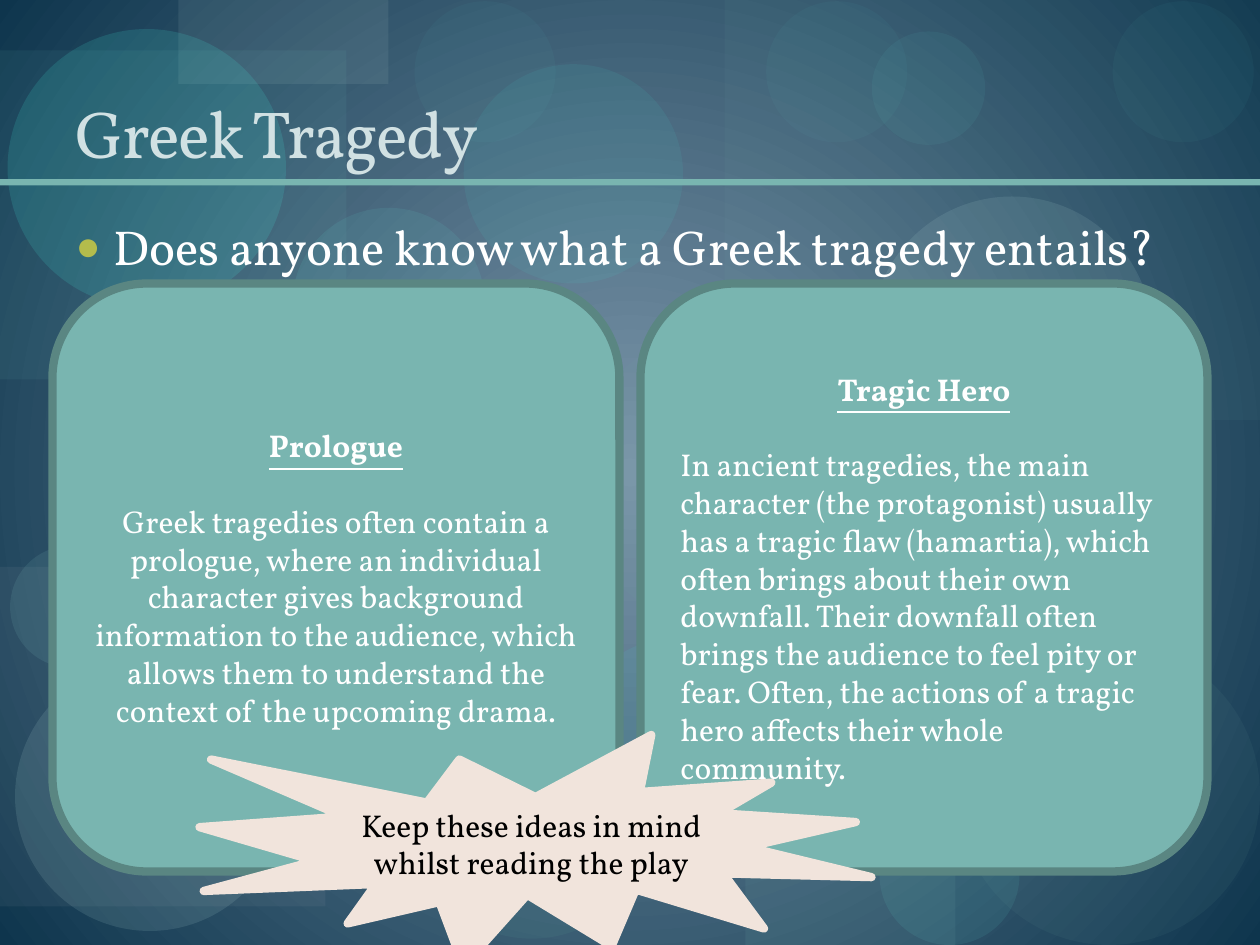
from lxml.etree import SubElement
from pptx import Presentation
from pptx.dml.color import RGBColor
from pptx.enum.shapes import MSO_SHAPE
from pptx.enum.text import MSO_ANCHOR, MSO_AUTO_SIZE, PP_ALIGN
from pptx.oxml.ns import qn
from pptx.util import Pt

FONT = "Vollkorn"
WHITE = RGBColor(0xFF, 0xFF, 0xFF)
BLACK = RGBColor(0x00, 0x00, 0x00)
TITLE_GRAY = RGBColor(0xD1, 0xE1, 0xE3)
BULLET_GREEN = RGBColor(0xB4, 0xBC, 0x4C)
TEAL = RGBColor(0x79, 0xB5, 0xB0)
CARD_BORDER = RGBColor(0x5A, 0x86, 0x82)
CREAM = RGBColor(0xF1, 0xE4, 0xDC)
CENTER_BLUE = RGBColor(0x7B, 0x96, 0xAA)
EDGE_BLUE = RGBColor(0x0E, 0x35, 0x4D)
DEEP_TEAL = RGBColor(0x54, 0x97, 0x91)
SAGE = RGBColor(0x70, 0xA3, 0x9E)
SILVER = RGBColor(0xB2, 0xB7, 0xBA)
AQUA = RGBColor(0x65, 0xE8, 0xDC)
BRIGHT_AQUA = RGBColor(0x44, 0xEA, 0xDC)
SOFT_AQUA = RGBColor(0x97, 0xDC, 0xD6)
PALE_AQUA = RGBColor(0xC1, 0xE8, 0xE4)
MIST = RGBColor(0xBE, 0xD7, 0xD4)
TURQUOISE = RGBColor(0x77, 0xD6, 0xCE)

OVAL = MSO_SHAPE.OVAL
RECTANGLE = MSO_SHAPE.RECTANGLE

# kind, (left, top, width, height) in points, color, opacity in percent
DECORATIONS = [
    (OVAL, (234.7, 399.6, 138.2, 136.8), DEEP_TEAL, 13),
    (RECTANGLE, (414, 0, 306, 240), TEAL, 6),
    (RECTANGLE, (0, 324, 186, 194), SILVER, 8),
    (OVAL, (329, 188, 171.4, 171.4), SAGE, 8),
    (OVAL, (502.6, 460, 80, 80), AQUA, 9),
    (OVAL, (497.5, 112.3, 161.3, 161.3), PALE_AQUA, 11),
    (OVAL, (8.6, 378, 154, 154), PALE_AQUA, 12),
    (OVAL, (328.3, 364.3, 119.5, 110.2), BRIGHT_AQUA, 8),
    (RECTANGLE, (0, 28.8, 198, 188), TURQUOISE, 7),
    (RECTANGLE, (102, 0, 120, 48), MIST, 10),
    (OVAL, (4.3, 16.6, 159.1, 159.1), BRIGHT_AQUA, 15),
    (OVAL, (5.8, 311.8, 69.8, 69.8), SOFT_AQUA, 10),
    (OVAL, (167, 118.8, 110.2, 110.2), AQUA, 9),
    (OVAL, (265, 36.7, 125.3, 125.3), BRIGHT_AQUA, 8),
    (OVAL, (437.8, 0.7, 80.6, 80.6), AQUA, 4),
    (OVAL, (547.2, 367.2, 172.8, 172.8), SAGE, 8),
    (OVAL, (498.2, 18, 64.8, 64.8), AQUA, 6),
    (OVAL, (635.8, 0.7, 80.6, 80.6), AQUA, 4),
    (RECTANGLE, (426, 498, 120, 42), TEAL, 10),
    (OVAL, (236.9, 0.7, 80.6, 80.6), AQUA, 4),
    (RECTANGLE, (0, 102.4, 720, 3.6), TEAL, 100),
]

CARDS = [
    ("Prologue",
     "Greek tragedies often contain a prologue, where an individual character "
     "gives background information to the audience, which allows them to "
     "understand the context of the upcoming drama.",
     PP_ALIGN.CENTER),
    ("Tragic Hero",
     "In ancient tragedies, the main character (the protagonist) usually has a "
     "tragic flaw (hamartia), which often brings about their own downfall. Their "
     "downfall often brings the audience to feel pity or fear. Often, the actions "
     "of a tragic hero affects their whole community.",
     PP_ALIGN.LEFT),
]
CARD_LEFT, CARD_TOP, CARD_WIDTH, CARD_HEIGHT, CARD_GAP = 30, 162, 324, 336, 12


def write(paragraph, text, size=18, color=WHITE, bold=False, underline=False,
          align=PP_ALIGN.LEFT, before=0, after=0, spacing=None):
    paragraph.alignment = align
    paragraph.space_before = Pt(before)
    paragraph.space_after = Pt(after)
    run = paragraph.add_run()
    run.text = text
    run.font.name = FONT
    run.font.size = Pt(size)
    run.font.bold = bold
    run.font.underline = underline
    run.font.color.rgb = color
    if spacing is not None:
        run.font._element.set("spc", str(int(spacing * 100)))


def add_bullet(paragraph, character, color, percent, indent):
    properties = paragraph._p.get_or_add_pPr()
    properties.set("marL", str(Pt(indent)))
    properties.set("indent", str(Pt(-indent)))
    bullet_color = SubElement(properties, qn("a:buClr"))
    SubElement(bullet_color, qn("a:srgbClr"), val=str(color))
    SubElement(properties, qn("a:buSzPct"), val=str(percent * 1000))
    SubElement(properties, qn("a:buChar"), char=character)


class SlideBuilder:
    def __init__(self, slide):
        self.slide = slide

    def background(self, center, edge):
        fill = self.slide.background.fill
        fill.gradient()
        for stop, color in zip(fill.gradient_stops, (center, edge)):
            stop.color.rgb = color
        gradient = self.slide.element.find(".//" + qn("a:gradFill"))
        gradient.remove(gradient.find(qn("a:lin")))
        path = SubElement(gradient, qn("a:path"), {"path": "circle"})
        SubElement(path, qn("a:fillToRect"), l="50000", t="50000", r="50000", b="50000")

    def shape(self, kind, box, color, opacity=100, border=None):
        shape = self.slide.shapes.add_shape(kind, *map(Pt, box))
        shape.shadow.inherit = False
        shape.fill.solid()
        shape.fill.fore_color.rgb = color
        if opacity < 100:
            color_element = shape.element.spPr.find(".//" + qn("a:srgbClr"))
            SubElement(color_element, qn("a:alpha"), val=str(opacity * 1000))
        if border is None:
            shape.line.fill.background()
        else:
            shape.line.color.rgb = border
            shape.line.width = Pt(4.72)
        shape.text_frame.word_wrap = True
        shape.text_frame.vertical_anchor = MSO_ANCHOR.MIDDLE
        return shape

    def placeholder(self, index, box, anchor):
        """Move a template placeholder in front of the shapes drawn so far."""
        shape = self.slide.placeholders[index]
        shape.left, shape.top, shape.width, shape.height = map(Pt, box)
        shape.element.getparent().append(shape.element)
        frame = shape.text_frame
        frame.auto_size = MSO_AUTO_SIZE.NONE
        frame.vertical_anchor = anchor
        return frame.paragraphs[0]

    def card(self, box, heading, text, align):
        frame = self.shape(MSO_SHAPE.ROUNDED_RECTANGLE, box, TEAL, border=CARD_BORDER).text_frame
        write(frame.paragraphs[0], heading, bold=True, underline=True,
              align=PP_ALIGN.CENTER, after=21.6)
        write(frame.add_paragraph(), text, align=align)

    def burst(self, box, text):
        shape = self.shape(MSO_SHAPE.EXPLOSION1, box, CREAM, border=CREAM)
        write(shape.text_frame.paragraphs[0], text, color=BLACK, align=PP_ALIGN.CENTER)


def main():
    presentation = Presentation()
    presentation.slide_width, presentation.slide_height = Pt(720), Pt(540)
    builder = SlideBuilder(presentation.slides.add_slide(presentation.slide_layouts[1]))

    builder.background(CENTER_BLUE, EDGE_BLUE)
    for decoration in DECORATIONS:
        builder.shape(*decoration)

    title = builder.placeholder(0, (36, 12, 648, 90), MSO_ANCHOR.BOTTOM)
    write(title, "Greek Tragedy", size=38, color=TITLE_GRAY, spacing=-1)
    question = builder.placeholder(1, (36, 120, 648, 360), MSO_ANCHOR.TOP)
    write(question, "Does anyone know what a Greek tragedy entails?", size=28, before=7)
    add_bullet(question, "●", BULLET_GREEN, percent=85, indent=21.6)

    for column, card in enumerate(CARDS):
        left = CARD_LEFT + column * (CARD_WIDTH + CARD_GAP)
        builder.card((left, CARD_TOP, CARD_WIDTH, CARD_HEIGHT), *card)
    builder.burst((114, 420, 384, 132), "Keep these ideas in mind whilst reading the play")

    presentation.save("out.pptx")


if __name__ == "__main__":
    main()
